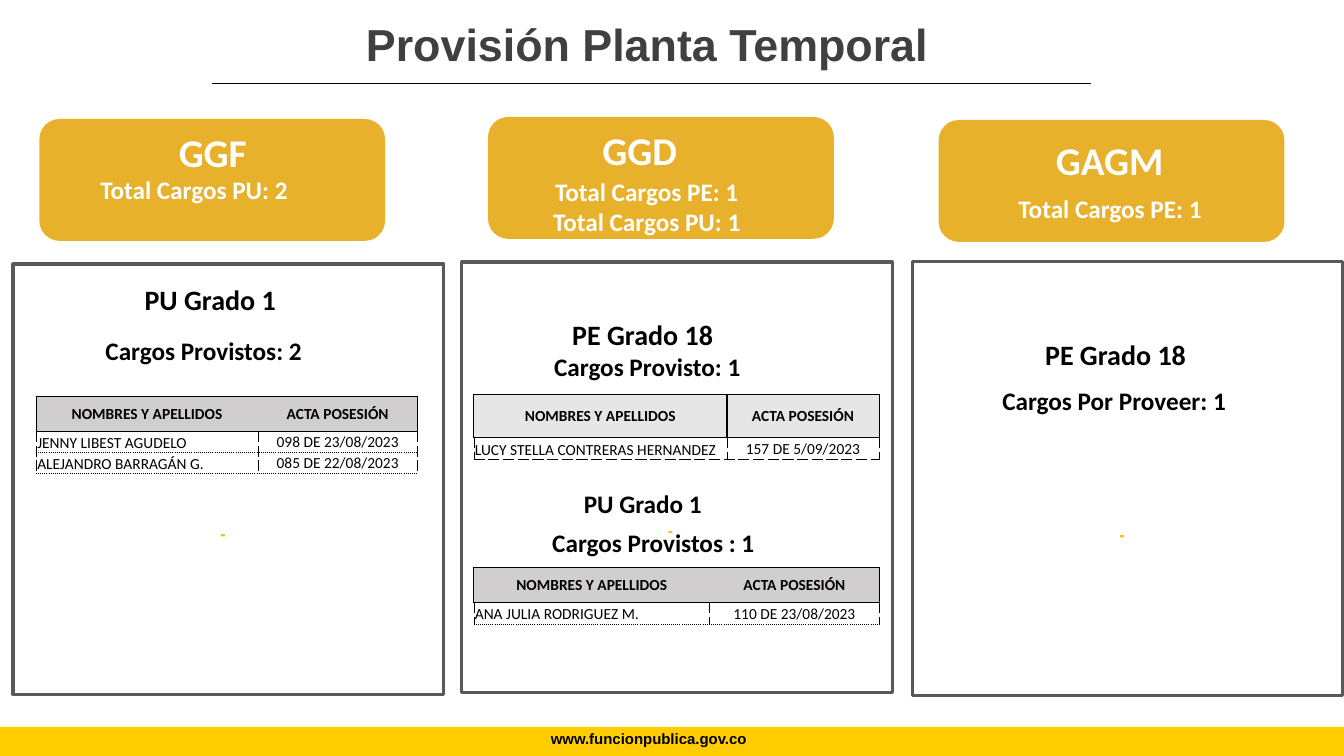
from lxml import etree
from pptx import Presentation
from pptx import util as u
from pptx.dml.color import RGBColor
from pptx.enum import shapes, text
from pptx.oxml import ns

COLORS = {
    "yellow": "FFCD00", "gold": "E8B12C", "dot": "FFC000", "frame": "595959",
    "title": "404040", "black": "000000", "white": "FFFFFF",
    "gray": "D0CECE", "light": "E7E6E6",
}
RGB = {name: RGBColor.from_string(value) for name, value in COLORS.items()}
Inches = u.Inches
MSO = shapes.MSO_SHAPE
TOP, MIDDLE, BOTTOM = text.MSO_ANCHOR.TOP, text.MSO_ANCHOR.MIDDLE, text.MSO_ANCHOR.BOTTOM

prs = Presentation()
prs.slide_width, prs.slide_height = Inches(13.33), Inches(7.5)
s = prs.slides.add_slide(prs.slide_layouts[6])


def add_box(kind, at, fill=None, line=None):
    sp = s.shapes.add_shape(kind, *[Inches(v) for v in at])
    sp.shadow.inherit = False
    if fill:
        sp.fill.solid()
        sp.fill.fore_color.rgb = RGB[fill]
    else:
        sp.fill.background()
    if line:
        sp.line.color.rgb = RGB[line]
        sp.line.width = u.Pt(2.25)
    else:
        sp.line.fill.background()


def format_text(tf, size, color, bold=True, font="Calibri", align=text.PP_ALIGN.CENTER):
    for p in tf.paragraphs:
        p.alignment = align
        for r in p.runs:
            r.font.size = u.Pt(size)
            r.font.name = font
            r.font.bold = bold
            r.font.color.rgb = RGB[color]


add_box(MSO.RECTANGLE, (0, 7.21, 13.33, 0.29), "yellow")
rule = s.shapes.add_connector(
    shapes.MSO_CONNECTOR.STRAIGHT, Inches(2.1), Inches(0.83), Inches(10.82), Inches(0.83))
rule.line.color.rgb = RGB["black"]
rule.line.width = u.Pt(1)
etree.SubElement(rule._element.spPr, ns.qn("a:effectLst"))

columns = [
    (0.39, 1.18, 0.13, 2.62, 4.27, 2.19, 5.3),
    (4.84, 1.16, 4.58, 2.6, 4.27, 6.63, 5.27),
    (9.31, 1.19, 9.05, 2.59, 4.31, 11.11, 5.31),
]
for card_x, card_y, frame_x, frame_y, frame_h, dot_x, dot_y in columns:
    add_box(MSO.ROUNDED_RECTANGLE, (card_x, card_y, 3.43, 1.21), "gold")
    add_box(MSO.RECTANGLE, (frame_x, frame_y, 4.27, frame_h), line="frame")
    add_box(MSO.ROUNDED_RECTANGLE, (dot_x, dot_y, 0.04, 0.02), "dot")

labels = [
    ("Provisión Planta Temporal", (1.62, 0.11, 9.6, 0.64), 32, "title", MIDDLE),
    ("www.funcionpublica.gov.co", (4.84, 7.19, 3.19, 0.28), 10.7, "black", MIDDLE),
    ("GGF", (1.24, 1.14, 1.74, 0.64), 28, "white", TOP),
    ("Total Cargos PU: 2", (0.51, 1.62, 2.83, 0.51), 18, "white", MIDDLE),
    ("PU Grado 1", (1.11, 2.67, 1.95, 0.51), 20, "black", TOP),
    ("Cargos Provistos: 2", (0.55, 3.22, 2.94, 0.51), 18, "black", MIDDLE),
    ("GGD", (5.39, 1.12, 1.91, 0.64), 28, "white", TOP),
    ("Total Cargos PE: 1\nTotal Cargos PU: 1", (5, 1.8, 2.83, 0.49), 18, "white", MIDDLE),
    ("PE Grado 18", (5.36, 3.02, 2.03, 0.51), 20, "black", TOP),
    ("Cargos Provisto: 1", (4.95, 3.38, 2.94, 0.51), 18, "black", MIDDLE),
    ("PU Grado 1", (5.4, 4.71, 1.95, 0.51), 18, "black", TOP),
    ("Cargos Provistos : 1", (5.01, 5.1, 2.94, 0.56), 18, "black", MIDDLE),
    ("GAGM", (10.05, 1.22, 1.91, 0.64), 28, "white", TOP),
    ("Total Cargos PE: 1", (9.77, 1.76, 2.48, 0.62), 18, "white", MIDDLE),
    ("PE Grado 18", (10.05, 3.22, 2.03, 0.51), 20, "black", TOP),
    ("Cargos Por Proveer: 1", (9.83, 3.77, 2.44, 0.4), 18, "black", MIDDLE),
]
for words, at, size, color, anchor in labels:
    tf = s.shapes.add_textbox(*[Inches(v) for v in at]).text_frame
    tf.word_wrap = True
    tf.vertical_anchor = anchor
    tf.margin_left = tf.margin_right = Inches(0.1)
    tf.margin_top = tf.margin_bottom = Inches(0.13 if anchor == TOP else 0.05)
    tf.text = words
    format_text(tf, size, color, font="Arial" if size in (32, 10.7) else "Calibri")

SOLID, DASH, DOT = (1, "solid"), (0.5, "dash"), (0.5, "sysDot")
tables = [
    ((0.36, 3.93), (2.2, 1.58), (0.35, 0.21, 0.21), "gray", "white", DOT,
     [("JENNY LIBEST AGUDELO", "098 DE 23/08/2023"),
      ("ALEJANDRO BARRAGÁN G.", "085 DE 22/08/2023")]),
    ((4.7, 5.63), (2.34, 1.68), (0.35, 0.21), "gray", "white", DOT,
     [("ANA JULIA RODRIGUEZ M.", "110 DE 23/08/2023")]),
    ((4.7, 3.91), (2.51, 1.51), (0.43, 0.22), "light", None, DASH,
     [("LUCY STELLA CONTRERAS HERNANDEZ", "157 DE 5/09/2023")]),
]
for (x, y), widths, heights, head_fill, body_fill, bottom, people in tables:
    table = s.shapes.add_table(
        len(heights), 2, Inches(x), Inches(y), Inches(sum(widths)), Inches(sum(heights))).table
    table.first_row = table.horz_banding = False
    for col, width in zip(table.columns, widths):
        col.width = Inches(width)
    for row, height in zip(table.rows, heights):
        row.height = Inches(height)
    for i, person in enumerate([("NOMBRES Y APELLIDOS", "ACTA POSESIÓN")] + people):
        for j, words in enumerate(person):
            cell = table.cell(i, j)
            header = i == 0
            name_cell = not header and j == 0
            inner = SOLID if head_fill == "light" else None
            if header:
                borders = {"L": inner if j else SOLID, "R": SOLID if j else inner,
                           "T": SOLID, "B": SOLID}
            else:
                borders = {"L": DASH, "R": DASH, "T": SOLID if i == 1 else bottom, "B": bottom}
            tcPr = cell._tc.get_or_add_tcPr()
            for side, border in borders.items():
                ln = etree.SubElement(tcPr, ns.qn(f"a:ln{side}"))
                if border is None:
                    etree.SubElement(ln, ns.qn("a:noFill"))
                    continue
                ln.set("w", str(u.Pt(border[0])))
                ink = etree.SubElement(ln, ns.qn("a:solidFill"))
                etree.SubElement(ink, ns.qn("a:srgbClr"), val=COLORS["black"])
                etree.SubElement(ln, ns.qn("a:prstDash"), val=border[1])
            fill = head_fill if header else body_fill
            if fill:
                cell.fill.solid()
                cell.fill.fore_color.rgb = RGB[fill]
            else:
                cell.fill.background()
            cell.margin_left = cell.margin_right = cell.margin_top = Inches(0.01)
            cell.margin_bottom = 0
            cell.vertical_anchor = BOTTOM if name_cell else MIDDLE
            cell.text_frame.text = words
            format_text(cell.text_frame, 11, "black", bold=header,
                        align=text.PP_ALIGN.LEFT if name_cell else text.PP_ALIGN.CENTER)

prs.save("out.pptx")
